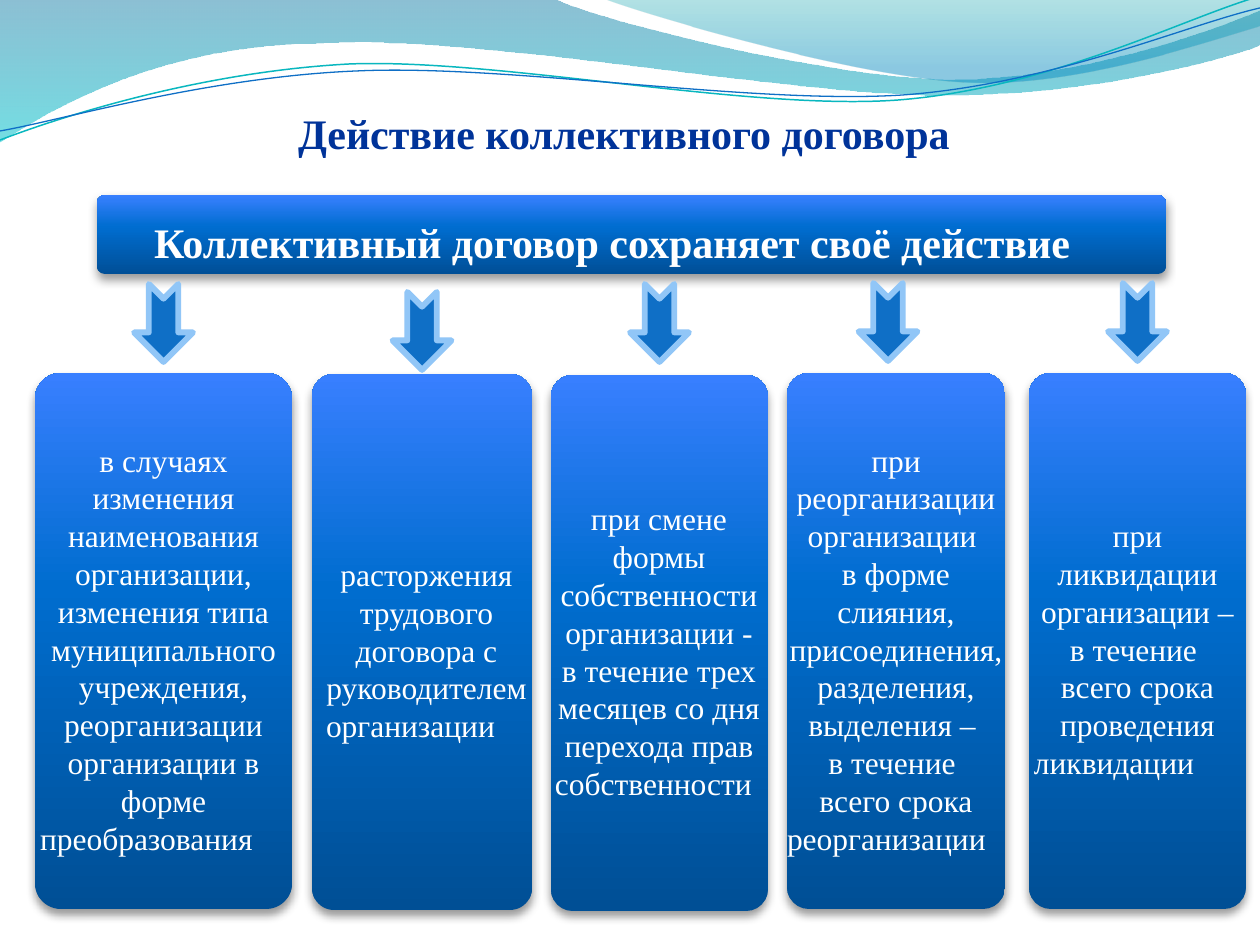
from lxml.etree import SubElement
from pptx import Presentation
from pptx.dml.color import RGBColor
from pptx.enum.shapes import MSO_SHAPE as SHAPE
from pptx.enum.text import MSO_ANCHOR as ANCHOR, MSO_AUTO_SIZE as AUTO, PP_ALIGN as ALIGN
from pptx.oxml.ns import qn
from pptx.util import Emu, Pt

FONT = "Times New Roman"
CARD_H = 536
BAR_STOPS = [(0, "004F97", 100), (60, "006DD0", 100), (100, "3980FF", 100)]
CARD_STOPS = [(0, "004F95", 100), (60, "006DCF", 100), (100, "387FFF", 100)]

# Each wave is a start point and steps: two numbers for a line, six for a curve
BAND = [(0, 0), (554, -1), (600, 21, 835, 79, 955, 79), (1075, 79, 1207, 33, 1260, 11),
        (1261, 45), (1239, 55, 1096, 96, 940, 95), (784, 95, 481, 35, 324, 43),
        (163, 44, 58, 105, -1, 142)]
CREST = [(604, -1), (641, 14, 859, 78, 969, 82), (1077, 87, 1211, 40, 1260, 26), (1260, 0)]
TEAL_LINE = [(0, 140), (60, 117, 199, 72, 349, 64), (498, 58, 747, 111, 898, 100),
             (1050, 88, 1182, 19, 1257, -3)]
BLUE_LINE = [(0, 131), (59, 121, 207, 77, 357, 71), (508, 64, 752, 105, 903, 95),
             (1053, 84, 1186, 25, 1260, 8)]

# Card (left, top, width), arrow centre from the card's top middle,
# text shift, side inset, paragraphs; a closing tab pulls the last line left
COLUMNS = [
    ((35, 373, 257), (0, -50), 0, 5,
     ["в случаях изменения наименования организации, изменения типа муниципального "
      "учреждения, реорганизации организации в форме преобразования\t\t"]),
    ((312, 374, 220), (0, -43), 9, 5,
     ["расторжения трудового договора с руководителем организации\t\t"]),
    ((551, 375, 217), (0, -52), -1, 5,
     ["при смене формы собственности организации - в течение трех месяцев со дня "
      "перехода прав собственности\t\t"]),
    ((787, 373, 218), (-8, -51), 0, 0,
     ["при реорганизации организации ",
      "в форме слияния, присоединения, разделения, выделения – ",
      "в течение ", "всего срока реорганизации\t"]),
    ((1029, 373, 217), (0, -51), 0, 5,
     ["при ликвидации организации –", "в течение ",
      "всего срока проведения ликвидации\t\t"]),
]


def px(n):
    return Emu(round(n * 914400 / 126))


def rgb(value):
    return RGBColor.from_string(value)


def set_gradient(sp, stops, angle):
    """Fill with (position %, colour, opacity %) stops, clockwise angle in degrees."""
    sp.fill.gradient()
    grad = sp._element.spPr.find(qn("a:gradFill"))
    for child in list(grad):
        grad.remove(child)
    stop_list = SubElement(grad, qn("a:gsLst"))
    for pos, color, opacity in stops:
        stop = SubElement(stop_list, qn("a:gs"), pos=str(pos * 1000))
        clr = SubElement(stop, qn("a:srgbClr"), val=color)
        if opacity < 100:
            SubElement(clr, qn("a:alpha"), val=str(opacity * 1000))
    SubElement(grad, qn("a:lin"), ang=str(angle * 60000), scaled="0")


def set_shadow(sp):
    sp.shadow.inherit = False
    effects = sp._element.spPr.find(qn("a:effectLst"))
    shadow = SubElement(effects, qn("a:outerShdw"), blurRad=str(Pt(5.2)), dist=str(Pt(3)),
                        dir="5400000", rotWithShape="0")
    clr = SubElement(shadow, qn("a:srgbClr"), val="000000")
    SubElement(clr, qn("a:alpha"), val="40000")


def bend(sp, steps):
    """Turn the outline's straight segments into the curves given in steps."""
    segments = list(sp._element.iter(qn("a:lnTo")))
    for segment, step in zip(segments, steps):
        if len(step) == 6:
            curve = segment.getparent().makeelement(qn("a:cubicBezTo"))
            for x, y in zip(step[::2], step[1::2]):
                SubElement(curve, qn("a:pt"), x=str(px(x) - sp.left), y=str(px(y) - sp.top))
            segment.getparent().replace(segment, curve)


def add_wave(s, steps, stops=None, line=None):
    ends = [(px(step[-2]), px(step[-1])) for step in steps]
    builder = s.shapes.build_freeform(*ends[0])
    builder.add_line_segments(ends[1:], close=bool(stops))
    sp = builder.convert_to_shape()
    bend(sp, steps[1:])
    sp.shadow.inherit = False
    if stops:
        set_gradient(sp, stops, 90)
        sp.line.fill.background()
    else:
        color, width = line
        sp.fill.background()
        sp.line.color.rgb = rgb(color)
        sp.line.width = Pt(width)


def add_waves(s):
    add_wave(s, BAND, stops=[(0, "0074A0", 45), (100, "00C4CD", 55)])
    add_wave(s, CREST, stops=[(0, "00A0A8", 30), (80, "008ABF", 45)])
    add_wave(s, TEAL_LINE, line=("09B7BF", 0.85))
    add_wave(s, BLUE_LINE, line=("0F6FC6", 0.75))


def write(tf, lines, size, color, bold, anchor, insets, align=ALIGN.CENTER):
    tf.word_wrap = True
    tf.auto_size = AUTO.NONE
    tf.vertical_anchor = anchor
    tf.margin_left, tf.margin_top, tf.margin_right, tf.margin_bottom = map(px, insets)
    for i, text in enumerate(lines):
        p = tf.add_paragraph() if i else tf.paragraphs[0]
        p.text = text
        p.alignment = align
        p.font.name = FONT
        p.font.size = Pt(size)
        p.font.bold = bold
        p.font.color.rgb = rgb(color)


def add_title(s, x, y, w, h):
    title = s.shapes.title
    s.shapes._spTree.append(title._element)  # in front of the waves
    title.left, title.top, title.width, title.height = map(px, (x, y, w, h))
    write(title.text_frame, ["Действие коллективного договора"],
          24, "003399", True, ANCHOR.BOTTOM, (0, 6, 0, 0))


def add_panel(s, x, y, w, h, stops):
    sp = s.shapes.add_shape(SHAPE.ROUNDED_RECTANGLE, *map(px, (x, y, w, h)))
    sp.adjustments[0] = 0.1
    set_gradient(sp, stops, 270)
    sp.line.fill.background()
    set_shadow(sp)


def add_label(s, x, y, w, h, lines, size, bold, insets, align=ALIGN.CENTER):
    box = s.shapes.add_textbox(*map(px, (x, y, w, h)))
    write(box.text_frame, lines, size, "FFFFFF", bold, ANCHOR.MIDDLE, insets, align)


def add_header_bar(s, x, y, w, h):
    add_panel(s, x, y, w, h, BAR_STOPS)
    add_label(s, x + 3, y + 2, w - 6, h - 5,
              ["Коллективный договор сохраняет своё действие"],
              24, True, (54, 20, 13, 5), ALIGN.LEFT)


def add_down_arrow(s, cx, cy, length=78, width=59):
    sp = s.shapes.add_shape(SHAPE.NOTCHED_RIGHT_ARROW, px(cx - length / 2),
                            px(cy - width / 2), px(length), px(width))
    sp.rotation = 90
    sp.shadow.inherit = False
    sp.fill.solid()
    sp.fill.fore_color.rgb = rgb("0F6FC6")
    sp.line.color.rgb = rgb("91C6F7")
    sp.line.width = Pt(3.35)


def add_column(s, box, arrow, shift, inset, lines):
    x, y, w = box
    dx, dy = arrow
    add_panel(s, x, y, w, CARD_H, CARD_STOPS)
    add_label(s, x + shift, y, w - shift, CARD_H, lines, 18, False, (inset, 20, inset, 5))
    add_down_arrow(s, x + w / 2 + dx, y + dy)


def main():
    prs = Presentation()
    prs.slide_width, prs.slide_height = px(1260), px(945)
    s = prs.slides.add_slide(prs.slide_layouts[5])
    add_waves(s)
    add_title(s, 43, 76, 1162, 82)
    add_header_bar(s, 97, 195, 1069, 79)
    for column in COLUMNS:
        add_column(s, *column)
    prs.save("out.pptx")


if __name__ == "__main__":
    main()
